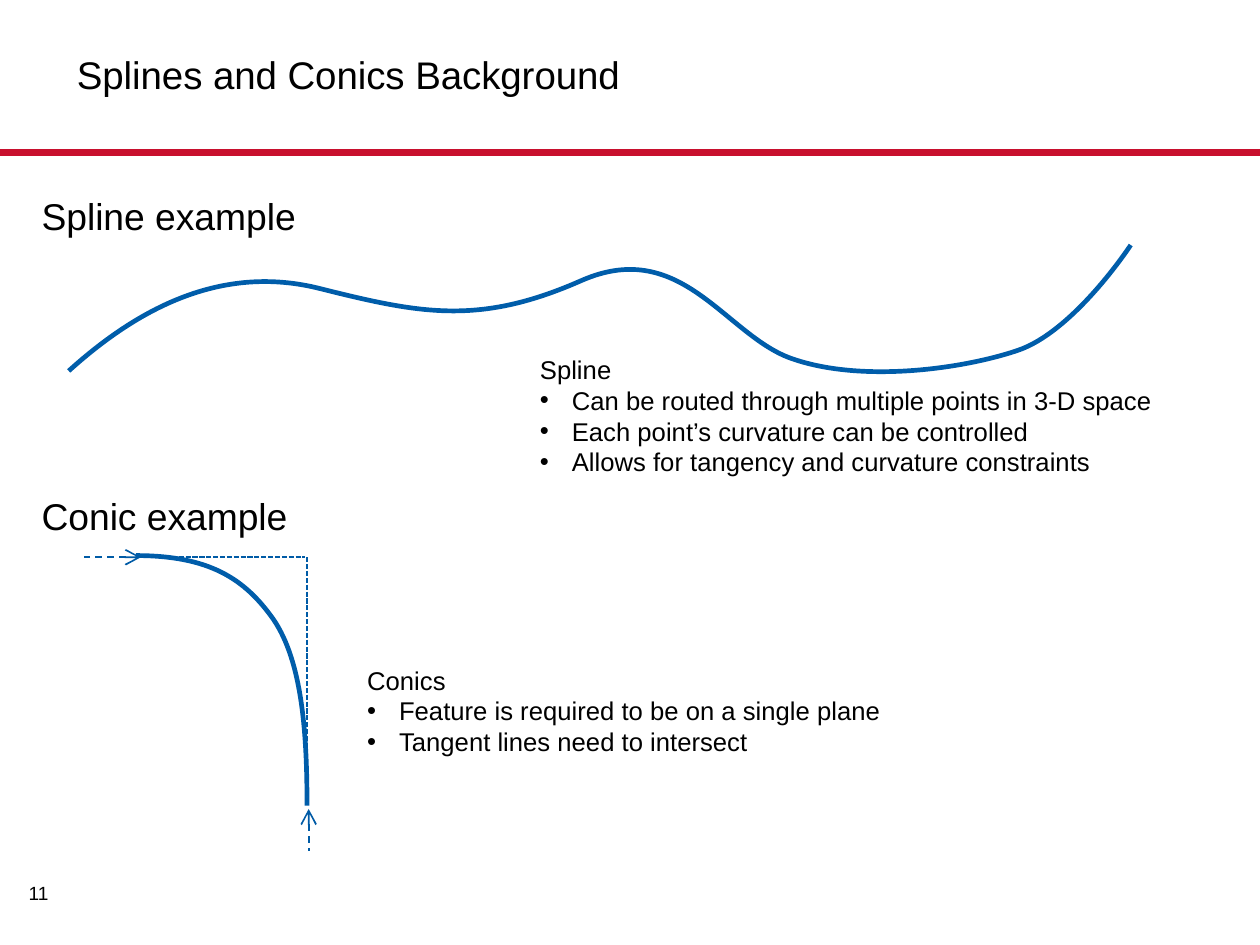
"""Build the slide on splines and conics."""
from pptx import Presentation
from pptx.dml.color import RGBColor
from pptx.enum.dml import MSO_LINE
from pptx.enum.shapes import MSO_CONNECTOR
from pptx.enum.text import MSO_ANCHOR, PP_ALIGN
from pptx.oxml.xmlchemy import OxmlElement
from pptx.util import Inches, Pt

BLACK = RGBColor(0x00, 0x00, 0x00)
RED = RGBColor(0xC8, 0x10, 0x2E)
CURVE_BLUE = RGBColor(0x00, 0x5D, 0xAA)
LINE_BLUE = RGBColor(0x00, 0x5B, 0xA6)

TITLE = "Splines and Conics Background"
PAGE = "11"
HEADINGS = [("Spline example", 1.1), ("Conic example", 2.89)]
NOTES = [
    ((2.09, 3.91, 4.8, 0.66), "Conics", [
        "Feature is required to be on a single plane",
        "Tangent lines need to intersect",
    ]),
    ((3.12, 2.06, 4.3, 0.84), "Spline", [
        "Can be routed through multiple points in 3-D space",
        "Each point’s curvature can be controlled",
        "Allows for tangency and curvature constraints",
    ]),
]
SPLINE = ((0.41, 2.21), [
    ((0.82, 1.84), (1.32, 1.57), (1.91, 1.72)),
    ((2.51, 1.87), (2.86, 1.94), (3.47, 1.67)),
    ((4.07, 1.41), (4.33, 2.01), (4.73, 2.14)),
    ((5.14, 2.28), (5.73, 2.2), (6.06, 2.09)),
    ((6.4, 1.98), (6.74, 1.46), (6.74, 1.46)),
])
CONIC = ((0.81, 3.31), [
    ((1.25, 3.31), (1.46, 3.45), (1.63, 3.69)),
    ((1.8, 3.94), (1.83, 4.36), (1.83, 4.8)),
])
ARROWS = [((0.84, 3.32), (0.5, 3.32)), ((1.84, 4.82), (1.84, 5.07))]
TANGENTS = [((0.82, 3.32), (1.82, 3.32)), ((1.83, 3.32), (1.83, 4.78))]


def add_text(s, text, at, size, bullets=(), align=PP_ALIGN.LEFT,
             anchor=MSO_ANCHOR.TOP, wrap=True):
    tf = s.shapes.add_textbox(*map(Inches, at)).text_frame
    tf.word_wrap = wrap
    tf.vertical_anchor = anchor
    for i, line in enumerate([text, *bullets]):
        p = tf.add_paragraph() if i else tf.paragraphs[0]
        p.alignment = align
        if i:
            pPr = p._p.get_or_add_pPr()
            pPr.set("marL", str(Inches(0.19)))
            pPr.set("indent", str(-Inches(0.19)))
            font = OxmlElement("a:buFont")
            font.set("typeface", "Arial")
            bullet = OxmlElement("a:buChar")
            bullet.set("char", "•")
            pPr.extend([font, bullet])
        r = p.add_run()
        r.text = line
        r.font.name = "Arial"
        r.font.size = Pt(size)
        r.font.color.rgb = BLACK


def add_line(s, start, end, color, width, dash=None, arrow=False):
    ends = [Inches(v) for v in (*start, *end)]
    line = s.shapes.add_connector(MSO_CONNECTOR.STRAIGHT, *ends)
    line.line.color.rgb = color
    line.line.width = Pt(width)
    if dash:
        line.line.dash_style = dash
    if arrow:
        head = OxmlElement("a:headEnd")
        head.set("type", "arrow")
        line.line._get_or_add_ln().append(head)
    line._element.spPr.append(OxmlElement("a:effectLst"))


def add_curve(s, start, segments):
    """Join the anchors, then bend each straight piece by its two handles."""
    fb = s.shapes.build_freeform(Inches(start[0]), Inches(start[1]))
    fb.add_line_segments([(Inches(x), Inches(y)) for *_, (x, y) in segments],
                         close=False)
    sp = fb.convert_to_shape()
    for piece, (*handles, _) in zip(sp._element.xpath(".//a:lnTo"), segments):
        bend = OxmlElement("a:cubicBezTo")
        for x, y in handles:
            pt = OxmlElement("a:pt")
            pt.set("x", str(Inches(x) - sp.left))
            pt.set("y", str(Inches(y) - sp.top))
            bend.append(pt)
        bend.append(piece[0])
        piece.getparent().replace(piece, bend)
    sp.fill.background()
    sp.line.color.rgb = CURVE_BLUE
    sp.line.width = Pt(2)
    sp.shadow.inherit = False


def main():
    prs = Presentation()
    prs.slide_width, prs.slide_height = Inches(7.51), Inches(5.63)
    s = prs.slides.add_slide(prs.slide_layouts[6])
    add_line(s, (0, 0.91), (7.51, 0.91), RED, 3)
    add_text(s, TITLE, (0.36, 0, 5.33, 0.88), 16.5, anchor=MSO_ANCHOR.MIDDLE)
    add_text(s, PAGE, (0.05, 5.2, 0.36, 0.25), 8.2, align=PP_ALIGN.CENTER,
             wrap=False)
    for text, top in HEADINGS:
        add_text(s, text, (0.15, top, 1.87, 0.37), 16)
    for curve in (SPLINE, CONIC):
        add_curve(s, *curve)
    for start, end in ARROWS:
        add_line(s, start, end, LINE_BLUE, 0.75, MSO_LINE.DASH, arrow=True)
    for start, end in TANGENTS:
        add_line(s, start, end, LINE_BLUE, 0.75, MSO_LINE.SQUARE_DOT)
    for at, text, bullets in NOTES:
        add_text(s, text, at, 11, bullets)
    prs.save("out.pptx")


if __name__ == "__main__":
    main()
